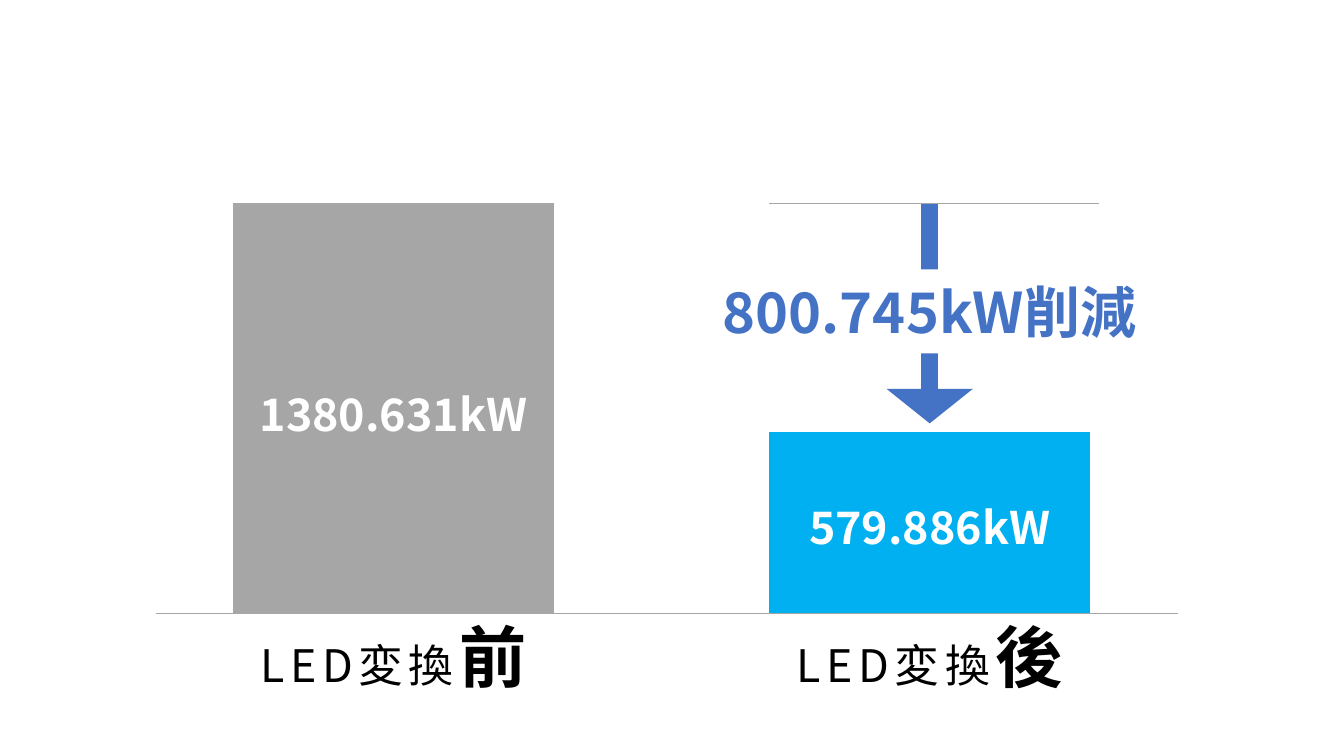
import lxml.etree
import pptx
import pptx.dml.color
import pptx.enum.shapes
import pptx.enum.text
import pptx.oxml.ns
import pptx.util
from pptx.util import Inches

FONT = "Noto Sans CJK JP"
COLORS = {
    "before": "A6A6A6",
    "after": "00B0F0",
    "rule": "A6A6A6",
    "saving": "4472C4",
    "label": "000000",
    "white": "FFFFFF",
}

BASELINE = 9.12
BEFORE_TOP = 3.03
AFTER_TOP = 6.43
BEFORE_LEFT = 3.47
AFTER_LEFT = 11.45
BAR_WIDTH = 4.77
LABEL_WIDTH, LABEL_HEIGHT = 5.58, 1.06
LABEL_TOP = 9.22


def rgb(name):
    return pptx.dml.color.RGBColor.from_string(COLORS[name])


def add_xml(parent, tag, **attributes):
    lxml.etree.SubElement(parent, pptx.oxml.ns.qn(tag), attributes)


def add_line(slide, start, end, color, width, arrow=False):
    line = slide.shapes.add_connector(
        pptx.enum.shapes.MSO_CONNECTOR.STRAIGHT,
        *(Inches(value) for value in (*start, *end)))
    line.line.color.rgb = rgb(color)
    line.line.width = pptx.util.Pt(width)
    properties = line._element.spPr
    if arrow:
        add_xml(properties.find(pptx.oxml.ns.qn("a:ln")), "a:tailEnd",
                type="triangle", w="lg", len="sm")
    add_xml(properties, "a:effectLst")


def add_block(slide, left, top, width, height, fill, outline=None):
    block = slide.shapes.add_shape(
        pptx.enum.shapes.MSO_SHAPE.RECTANGLE,
        Inches(left), Inches(top), Inches(width), Inches(height))
    block.shadow.inherit = False
    block.fill.solid()
    block.fill.fore_color.rgb = rgb(fill)
    if outline:
        block.line.color.rgb = rgb(outline)
        block.line.width = pptx.util.Pt(1)
    else:
        block.line.fill.background()
    return block


def write_text(shape, parts, color, spacing=0):
    """Write (text, size, bold) parts as one centred paragraph."""
    frame = shape.text_frame
    frame.word_wrap = True
    frame.vertical_anchor = pptx.enum.text.MSO_ANCHOR.MIDDLE
    frame.margin_left = frame.margin_right = Inches(0.06)
    frame.margin_top = frame.margin_bottom = Inches(0.06)

    paragraph = frame.paragraphs[0]
    paragraph.alignment = pptx.enum.text.PP_ALIGN.CENTER
    paragraph.space_after = pptx.util.Pt(6)
    paragraph.font.color.rgb = rgb(color)
    paragraph.font.name = FONT
    defaults = paragraph._p.pPr.find(pptx.oxml.ns.qn("a:defRPr"))
    add_xml(defaults, "a:ea", typeface=FONT)
    if spacing:
        defaults.set("spc", str(spacing * 100))

    fonts_agree = len(parts) == 1
    for text, size, bold in parts:
        run = paragraph.add_run()
        run.text = text
        font = paragraph.font if fonts_agree else run.font
        font.size = pptx.util.Pt(size)
        font.bold = bold


def add_label(slide, bar_left, top, parts, color, spacing=0):
    """Add a text box centred on a bar."""
    left = bar_left + (BAR_WIDTH - LABEL_WIDTH) / 2
    label = slide.shapes.add_textbox(
        Inches(left), Inches(top), Inches(LABEL_WIDTH), Inches(LABEL_HEIGHT))
    write_text(label, parts, color, spacing)


def main():
    presentation = pptx.Presentation()
    presentation.slide_width = Inches(20)
    presentation.slide_height = Inches(11.25)
    slide = presentation.slides.add_slide(presentation.slide_layouts[6])

    # Baseline and the two bars
    add_line(slide, (2.32, BASELINE), (17.53, BASELINE), "rule", 0.5)
    bars = (
        (BEFORE_LEFT, BEFORE_TOP, "before", "前", "1380.631kW", 5.62),
        (AFTER_LEFT, AFTER_TOP, "after", "後", "579.886kW", 7.3),
    )
    for left, top, color, *_ in bars:
        add_block(slide, left, top, BAR_WIDTH, BASELINE - top, color, color)

    # Names below the bars and values on them
    for left, _, _, stage, _, _ in bars:
        add_label(slide, left, LABEL_TOP,
                  [("LED変換", 48, False), (stage, 72, True)], "label", spacing=6)
    for left, _, _, _, power, power_top in bars:
        add_label(slide, left, power_top, [(power, 48, True)], "white")

    # Saving: former level, downward arrow and amount
    arrow_x = AFTER_LEFT + BAR_WIDTH / 2
    add_line(slide, (AFTER_LEFT, BEFORE_TOP), (16.35, BEFORE_TOP), "rule", 0.5)
    add_line(slide, (arrow_x, BEFORE_TOP), (arrow_x, 6.3), "saving", 18.5, arrow=True)
    saving = add_block(slide, 9.98, 4.01, 7.7, 1.25, "white")
    write_text(saving, [("800.745kW削減", 60, True)], "saving")

    presentation.save("out.pptx")


if __name__ == "__main__":
    main()
